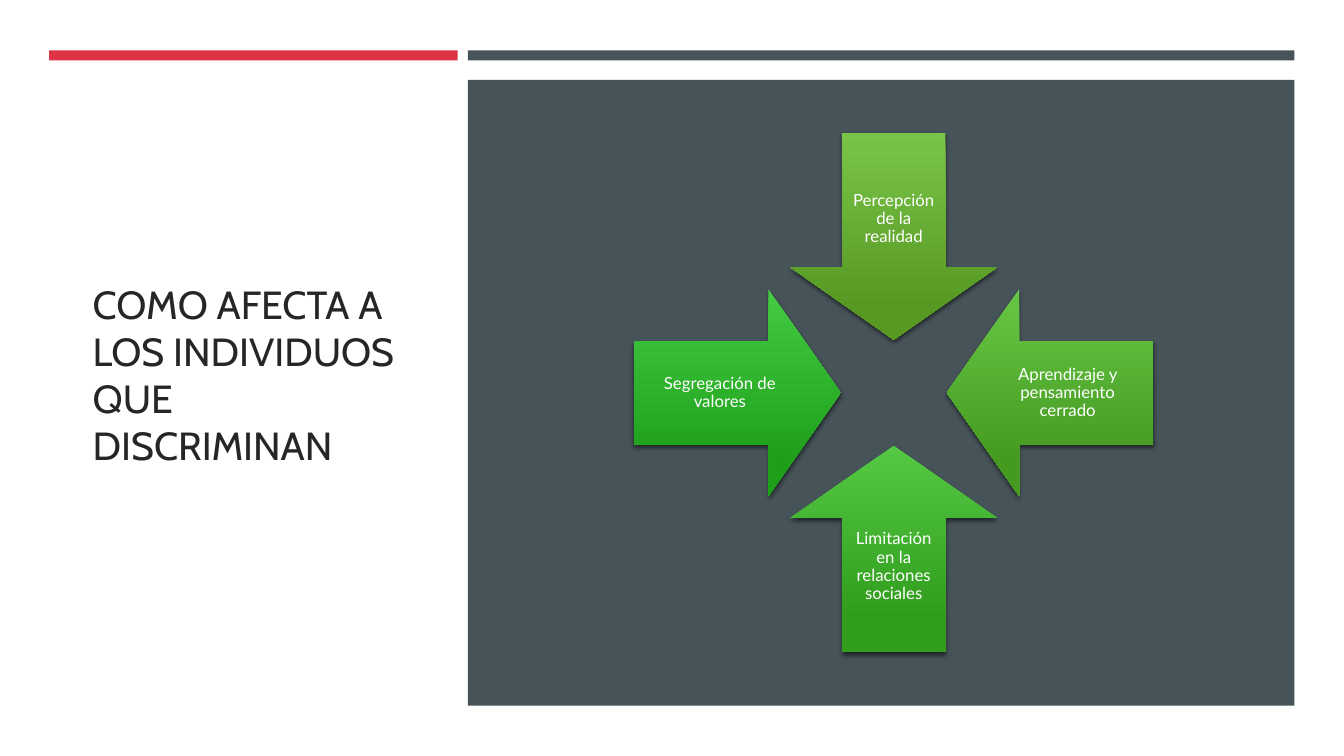
from dataclasses import dataclass

from lxml import etree
from pptx import Presentation
from pptx.dml.color import RGBColor
from pptx.enum.shapes import MSO_SHAPE
from pptx.enum.text import MSO_ANCHOR, MSO_AUTO_SIZE, PP_ALIGN
from pptx.oxml.ns import qn
from pptx.util import Emu, Inches, Pt

RECT, ARROW = MSO_SHAPE.RECTANGLE, MSO_SHAPE.DOWN_ARROW
MIDDLE, NO_FIT = MSO_ANCHOR.MIDDLE, MSO_AUTO_SIZE.NONE
LEFT, CENTER = PP_ALIGN.LEFT, PP_ALIGN.CENTER
TITLE_ONLY = 5
COLS, ROWS = 160, 90
WIDTH, HEIGHT = Inches(13.333), Inches(7.5)


@dataclass(frozen=True)
class Theme:
    paper: str = "FFFFFF"
    ink: str = "262626"
    red: str = "DD3344"
    slate: str = "465359"
    shade: str = "000000"
    head_font: str = "Cabin"
    body_font: str = "Lato"
    head_size: int = 28
    body_size: int = 12


@dataclass(frozen=True)
class Box:
    """A place on the grid, in columns and rows."""
    col: float
    row: float
    wide: float
    high: float


@dataclass(frozen=True)
class Panel:
    box: Box
    color: str


@dataclass(frozen=True)
class Force:
    """An arrow pointing inward; dx and dy lead from the hub to it."""
    text: str
    dx: int
    dy: int
    turn: int
    light: str
    dark: str


THEME = Theme()
TITLE = "COMO AFECTA A LOS INDIVIDUOS QUE DISCRIMINAN"
TITLE_BOX = Box(9.84, 13.7, 40.1, 61.8)
SIDE, SIDE_WIDE = 55.7, 98.4
PANELS = (
    Panel(Box(5.85, 6, 48.65, 1.2), THEME.red),
    Panel(Box(SIDE, 6, SIDE_WIDE, 1.2), THEME.slate),
    Panel(Box(SIDE, 9.5, SIDE_WIDE, 74.5), THEME.slate),
)
HUB_COL, HUB_ROW = 106.4, 46.75
ARROW_SIDE, ARROW_GAP = 24.6, 18.6
LABEL_LONG, LABEL_SHORT, LABEL_GAP = 20.3, 12.4, 20.7
FORCES = (
    Force("Percepción de la realidad", 0, -1, 0, "79C448", "579923"),
    Force("Aprendizaje y pensamiento cerrado", 1, 0, 90, "67C646", "459B20"),
    Force("Limitación en la relaciones sociales", 0, 1, 180, "54C844", "319D1D"),
    Force("Segregación de valores", -1, 0, 270, "44CA43", "1D9F1A"),
)


def place(box: Box) -> tuple[Emu, Emu, Emu, Emu]:
    """Turn grid units into left, top, width and height."""
    return (Emu(round(box.col * WIDTH / COLS)), Emu(round(box.row * HEIGHT / ROWS)),
            Emu(round(box.wide * WIDTH / COLS)), Emu(round(box.high * HEIGHT / ROWS)))


def around(force: Force, gap: float, wide: float, high: float) -> Box:
    """Centre a box at a given gap from the hub."""
    return Box(HUB_COL + force.dx * gap - wide / 2,
               HUB_ROW + force.dy * gap - high / 2, wide, high)


def write(frame, text: str, font: str, size: int, color: str, align) -> None:
    frame.word_wrap = True
    frame.auto_size = NO_FIT
    frame.vertical_anchor = MIDDLE
    para = frame.paragraphs[0]
    para.alignment = align
    run = para.add_run()
    run.text = text
    run.font.name = font
    run.font.size = Pt(size)
    run.font.color.rgb = RGBColor.from_string(color)


def add_title(slide) -> None:
    title = slide.shapes.title
    title.left, title.top, title.width, title.height = place(TITLE_BOX)
    write(title.text_frame, TITLE, THEME.head_font, THEME.head_size, THEME.ink, LEFT)


def add_panel(slide, panel: Panel) -> None:
    shape = slide.shapes.add_shape(RECT, *place(panel.box))
    shape.shadow.inherit = False
    shape.fill.solid()
    shape.fill.fore_color.rgb = RGBColor.from_string(panel.color)
    shape.line.fill.background()


def add_shade(shape) -> None:
    """Cast a soft shadow straight down, whatever the turn of the shape."""
    shape.shadow.inherit = False
    effects = shape._element.spPr.find(qn("a:effectLst"))
    outer = etree.SubElement(effects, qn("a:outerShdw"), blurRad=str(Pt(3)),
                             dist=str(Pt(2)), dir="5400000", rotWithShape="0")
    color = etree.SubElement(outer, qn("a:srgbClr"), val=THEME.shade)
    etree.SubElement(color, qn("a:alpha"), val="55000")


def add_arrow(slide, force: Force) -> None:
    box = around(force, ARROW_GAP, ARROW_SIDE, ARROW_SIDE)
    shape = slide.shapes.add_shape(ARROW, *place(box))
    shape.adjustments[0], shape.adjustments[1] = 0.5, 0.35
    shape.rotation = force.turn
    shape.line.fill.background()
    shape.fill.gradient()
    shape.fill.gradient_angle = 270
    tones = ((0, force.light), (0.84, force.dark))
    for stop, (spot, tone) in zip(shape.fill.gradient_stops, tones):
        stop.position = spot
        stop.color.rgb = RGBColor.from_string(tone)
    shape._element.spPr.find(qn("a:gradFill")).set("rotWithShape", "0")
    add_shade(shape)


def add_label(slide, force: Force) -> None:
    size = (LABEL_LONG, LABEL_SHORT) if force.dx else (LABEL_SHORT, LABEL_LONG)
    label = slide.shapes.add_textbox(*place(around(force, LABEL_GAP, *size)))
    frame = label.text_frame
    frame.margin_left = frame.margin_right = Inches(0.09)
    frame.margin_top = frame.margin_bottom = Inches(0.09)
    write(frame, force.text, THEME.body_font, THEME.body_size, THEME.paper, CENTER)
    frame.paragraphs[0].line_spacing = 0.9


def main() -> None:
    deck = Presentation()
    deck.slide_width, deck.slide_height = WIDTH, HEIGHT
    slide = deck.slides.add_slide(deck.slide_layouts[TITLE_ONLY])
    back = slide.background.fill
    back.solid()
    back.fore_color.rgb = RGBColor.from_string(THEME.paper)
    add_title(slide)
    for panel in PANELS:
        add_panel(slide, panel)
    for force in FORCES:
        add_arrow(slide, force)
        add_label(slide, force)
    deck.save("out.pptx")


if __name__ == "__main__":
    main()
